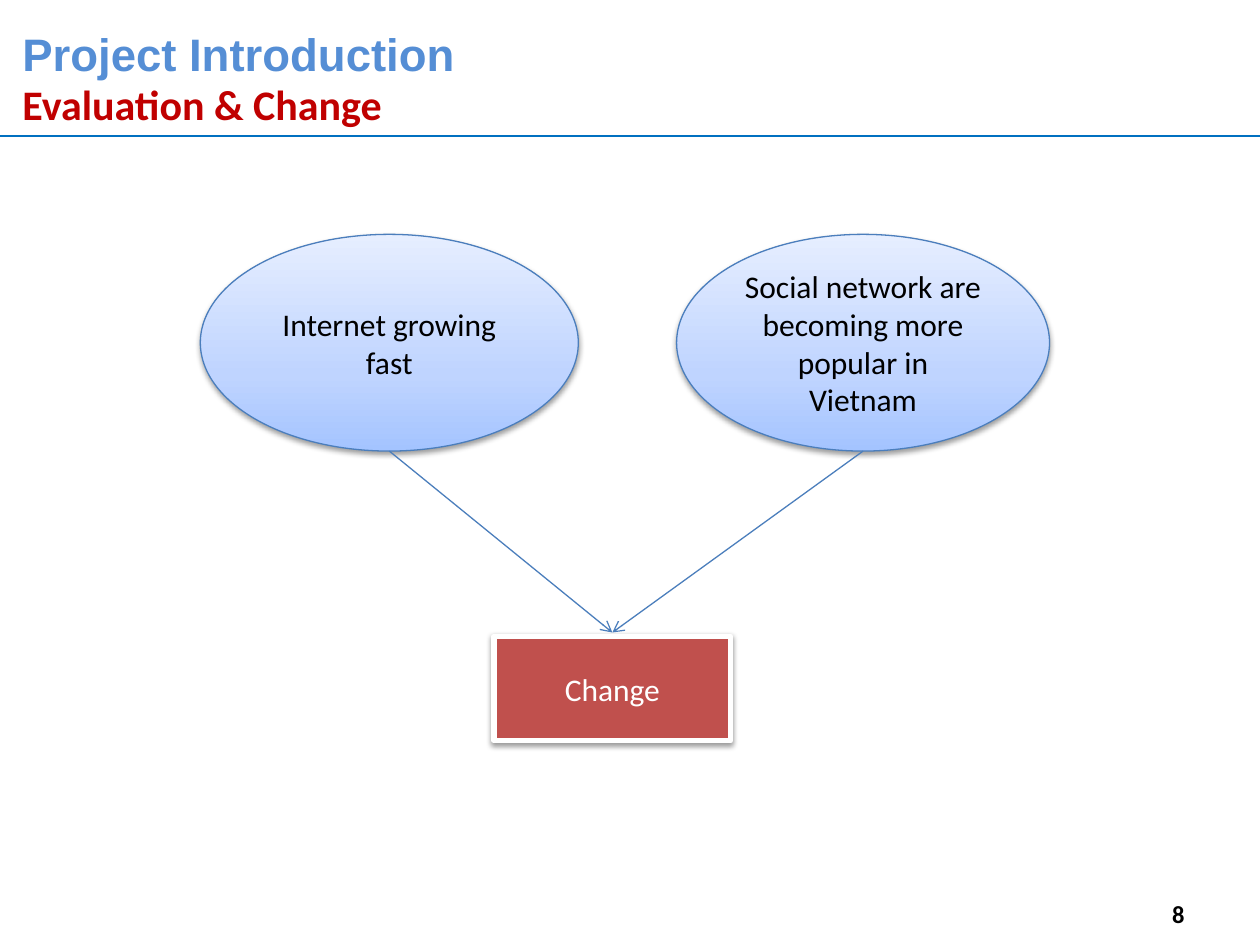
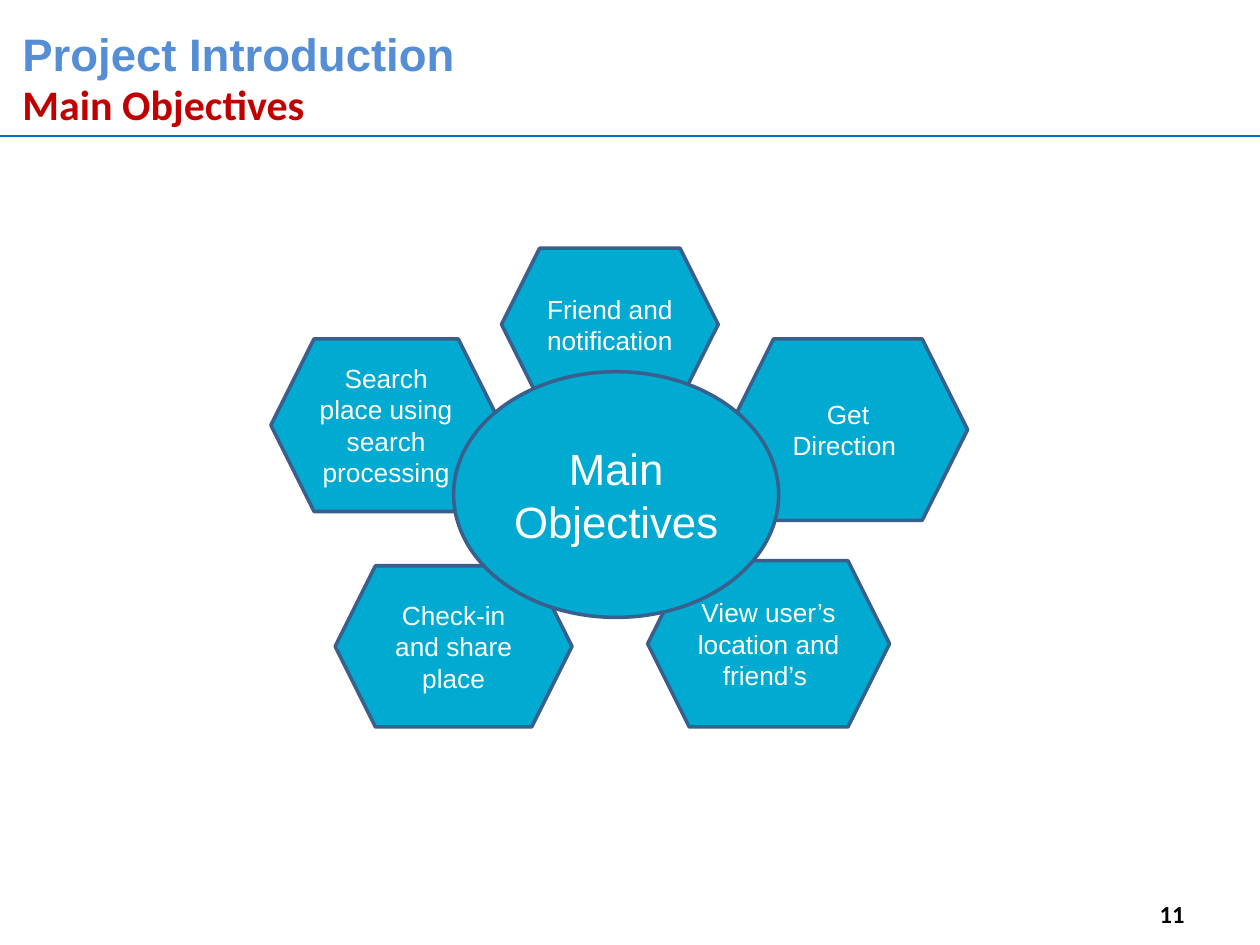
from copy import deepcopy

from pptx import Presentation
from pptx.dml.color import RGBColor
from pptx.enum.shapes import MSO_CONNECTOR, MSO_SHAPE
from pptx.enum.text import MSO_ANCHOR, PP_ALIGN
from pptx.oxml.ns import qn
from pptx.util import Inches, Pt
from lxml import etree

STRAIGHT = MSO_CONNECTOR.STRAIGHT
ELLIPSE, HEXAGON, RECTANGLE = MSO_SHAPE.OVAL, MSO_SHAPE.HEXAGON, MSO_SHAPE.RECTANGLE
MIDDLE, TOP = MSO_ANCHOR.MIDDLE, MSO_ANCHOR.TOP
LEFT, CENTER, RIGHT = PP_ALIGN.LEFT, PP_ALIGN.CENTER, PP_ALIGN.RIGHT

TITLE_BLUE = RGBColor(0x55, 0x8E, 0xD5)
SUBTITLE_RED = RGBColor(0xC0, 0x00, 0x00)
RULE_BLUE = RGBColor(0x00, 0x70, 0xC0)
OUTLINE_BLUE = RGBColor(0x4B, 0x7E, 0xBC)
CHANGE_RED = RGBColor(0xC0, 0x50, 0x4D)
OBJECTIVE_CYAN = RGBColor(0x00, 0xAA, 0xD0)
OBJECTIVE_OUTLINE = RGBColor(0x3A, 0x5F, 0x8C)
WHITE = RGBColor(0xFF, 0xFF, 0xFF)
BLACK = RGBColor(0x00, 0x00, 0x00)
CAUSE_GRADIENT = [
    (0, RGBColor(0xA4, 0xC4, 0xFF)),
    (0.35, RGBColor(0xBF, 0xD4, 0xFF)),
    (1, RGBColor(0xE6, 0xEE, 0xFF)),
]

SLIDE_WIDTH, SLIDE_HEIGHT = 10, 7.5
TITLE = "Project Introduction"
TITLE_BOX = (0.08, 0.19, 3.83, 0.9)
NUMBER_BOX = (7.91, 7, 1.59, 0.5)
RULE_TOP = 1.08

# Boxes are left, top, width, height in inches.
CAUSES = [
    ("Internet growing fast", (1.59, 1.86, 3, 1.72)),
    ("Social network are becoming more popular in Vietnam", (5.37, 1.86, 2.96, 1.72)),
]
CHANGE = ("Change", (3.92, 5.05, 1.88, 0.83))
ARROW_GAP = 0.03

OBJECTIVES = [
    ("Search place using search processing", (2.15, 2.69, 1.83, 1.37)),
    ("Friend and notification", (3.98, 1.97, 1.72, 1.21)),
    ("Get Direction ", (5.78, 2.69, 1.9, 1.44)),
    ("Check-in and share place", (2.66, 4.49, 1.88, 1.28)),
    ("View user’s location and friend’s ", (5.14, 4.45, 1.92, 1.32)),
]
CENTRE = ("Main Objectives", (3.6, 2.95, 2.58, 1.95))


def write(shape, lines, align=CENTER, anchor=MIDDLE, spacing=None):
    """Fill a shape with lines of (text, size, font, colour, bold)."""
    frame = shape.text_frame
    frame.word_wrap = True
    frame.vertical_anchor = anchor
    for index, (text, size, font, colour, bold) in enumerate(lines):
        paragraph = frame.add_paragraph() if index else frame.paragraphs[0]
        paragraph.alignment = align
        paragraph.line_spacing = spacing
        run = paragraph.add_run()
        run.text = text
        run.font.size = Pt(size)
        run.font.name = font
        run.font.color.rgb = colour
        run.font.bold = bold


def add_box(slide, kind, box, line_colour, line_width, fill_colour=None):
    shape = slide.shapes.add_shape(kind, *map(Inches, box))
    shape.shadow.inherit = False
    shape.line.color.rgb = line_colour
    shape.line.width = Pt(line_width)
    if fill_colour is not None:
        shape.fill.solid()
        shape.fill.fore_color.rgb = fill_colour
    return shape


def add_line(slide, start, end, colour):
    line = slide.shapes.add_connector(STRAIGHT, *map(Inches, start + end))
    line.line.color.rgb = colour
    line.line.width = Pt(0.75)
    etree.SubElement(line._element.spPr, qn("a:effectLst"))
    return line


def add_arrowhead(connector):
    outline = connector.line._get_or_add_ln()
    etree.SubElement(outline, qn("a:tailEnd"), type="arrow")


def add_shadow(shape):
    effects = shape._element.spPr.find(qn("a:effectLst"))
    shadow = etree.SubElement(
        effects, qn("a:outerShdw"), blurRad=str(Pt(3.1)), dist=str(Pt(1.6)),
        dir="5400000", rotWithShape="0")
    colour = etree.SubElement(shadow, qn("a:srgbClr"), val=str(BLACK))
    etree.SubElement(colour, qn("a:alpha"), val="38000")


def fill_gradient(shape, stops):
    """Run the stops from the bottom of the shape to its top."""
    shape.fill.gradient()
    shape.fill.gradient_angle = 90
    stop_list = shape._element.spPr.find(qn("a:gradFill")).find(qn("a:gsLst"))
    while len(stop_list) < len(stops):
        stop_list.append(deepcopy(stop_list[0]))
    for stop, (position, colour) in zip(shape.fill.gradient_stops, stops):
        stop.position = position
        stop.color.rgb = colour


def add_slide(presentation, subtitle, number):
    slide = presentation.slides.add_slide(presentation.slide_layouts[6])
    add_line(slide, (0, RULE_TOP), (SLIDE_WIDTH, RULE_TOP), RULE_BLUE)
    title = slide.shapes.add_textbox(*map(Inches, TITLE_BOX))
    write(title, [(TITLE, 26, "Arial", TITLE_BLUE, True),
                  (subtitle, 24, "Calibri", SUBTITLE_RED, True)],
          LEFT, TOP, 0.95)
    number_box = slide.shapes.add_textbox(*map(Inches, NUMBER_BOX))
    write(number_box, [(str(number), 14, "Calibri", BLACK, True)], RIGHT)
    return slide


def build_change_slide(presentation):
    slide = add_slide(presentation, "Evaluation & Change", 8)
    for text, box in CAUSES:
        cause = add_box(slide, ELLIPSE, box, OUTLINE_BLUE, 0.75)
        fill_gradient(cause, CAUSE_GRADIENT)
        add_shadow(cause)
        write(cause, [(text, 18, "Calibri", BLACK, False)])

    text, change_box = CHANGE
    left, top, width, _ = change_box
    arrow_end = (left + width / 2, top - ARROW_GAP)
    for _, (left, top, width, height) in CAUSES:
        arrow_start = (left + width / 2, top + height)
        add_arrowhead(add_line(slide, arrow_start, arrow_end, OUTLINE_BLUE))

    change = add_box(slide, RECTANGLE, change_box, WHITE, 3, CHANGE_RED)
    add_shadow(change)
    write(change, [(text, 18, "Calibri", WHITE, False)])


def build_objectives_slide(presentation):
    slide = add_slide(presentation, "Main Objectives", 11)
    parts = [(HEXAGON, 15, *objective) for objective in OBJECTIVES]
    parts.append((ELLIPSE, 25, *CENTRE))
    for kind, size, text, box in parts:
        shape = add_box(slide, kind, box, OBJECTIVE_OUTLINE, 2, OBJECTIVE_CYAN)
        write(shape, [(text, size, "Arial", WHITE, False)])


def main():
    presentation = Presentation()
    presentation.slide_width = Inches(SLIDE_WIDTH)
    presentation.slide_height = Inches(SLIDE_HEIGHT)
    build_change_slide(presentation)
    build_objectives_slide(presentation)
    presentation.save("out.pptx")


if __name__ == "__main__":
    main()
